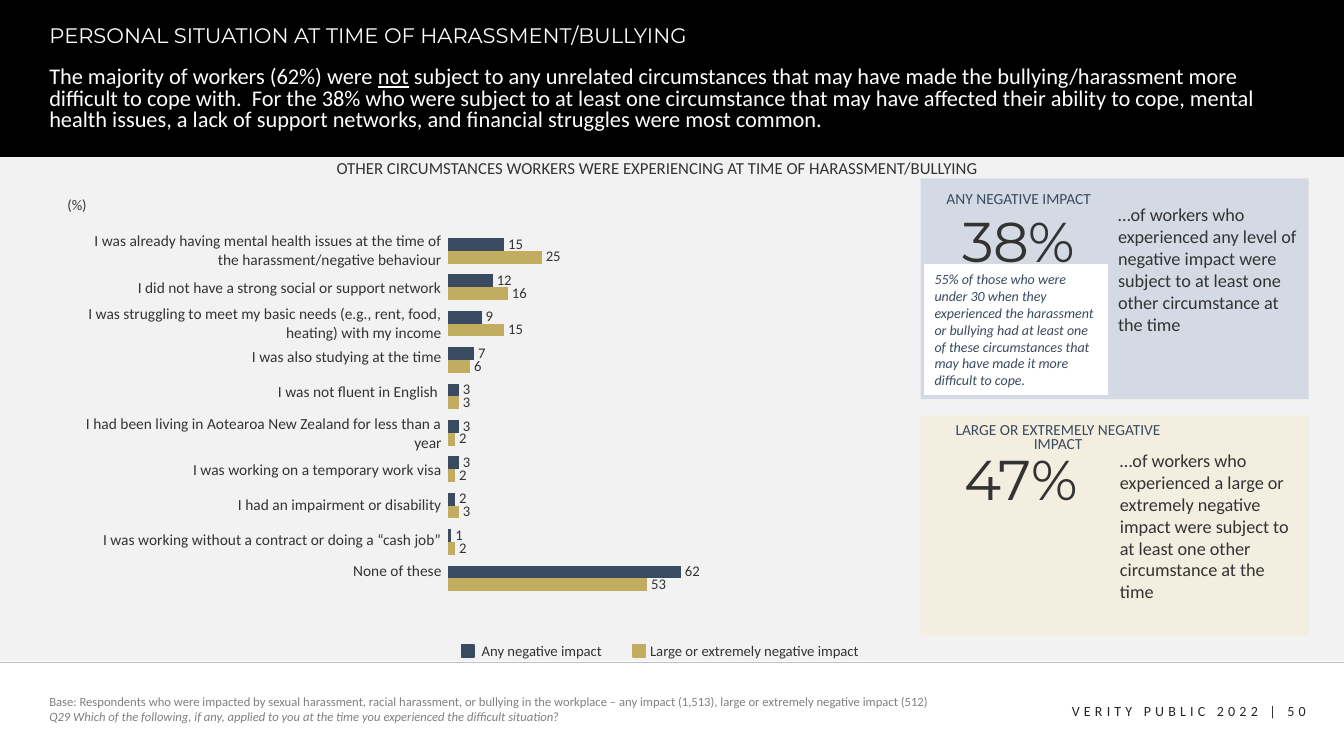
from dataclasses import dataclass

from lxml import etree
from pptx import Presentation
from pptx.chart.data import CategoryChartData
from pptx.dml.color import RGBColor
from pptx.enum.chart import XL_CHART_TYPE, XL_LABEL_POSITION
from pptx.enum.shapes import MSO_CONNECTOR, MSO_SHAPE
from pptx.enum.text import MSO_ANCHOR, PP_ALIGN
from pptx.oxml import parse_xml
from pptx.oxml.ns import nsdecls, qn
from pptx.util import Inches, Pt

RECT = MSO_SHAPE.RECTANGLE
STRAIGHT = MSO_CONNECTOR.STRAIGHT
BAR = XL_CHART_TYPE.BAR_CLUSTERED
OUTSIDE = XL_LABEL_POSITION.OUTSIDE_END
TOP, MIDDLE = MSO_ANCHOR.TOP, MSO_ANCHOR.MIDDLE
LEFT, CENTER, RIGHT = PP_ALIGN.LEFT, PP_ALIGN.CENTER, PP_ALIGN.RIGHT
NO_TABLE_STYLE = "{2D5ABB26-0587-4C30-8999-92F81FD0307C}"


@dataclass(frozen=True)
class Theme:
    body: str = "Calibri"
    display: str = "Montserrat"
    black: str = "000000"
    white: str = "FFFFFF"
    panel: str = "F2F2F2"
    rule: str = "BFBFBF"
    text: str = "333333"
    footer: str = "262626"
    muted: str = "808080"
    navy: str = "3A4A60"
    gold: str = "C1AC5F"
    pale_navy: str = "D3DAE4"
    pale_gold: str = "F3EEDF"
    figure: float = 40
    lead: float = 16
    title: float = 15
    story: float = 13
    heading: float = 12
    label: float = 11
    value: float = 10.5
    small: float = 10
    note: float = 9


class SlideBuilder:
    def __init__(self, slide, theme):
        self.slide = slide
        self.theme = theme

    def color(self, name):
        return RGBColor.from_string(getattr(self.theme, name))

    def style(self, font, size, color="text", face="body"):
        font.name = getattr(self.theme, face)
        font.size = Pt(getattr(self.theme, size))
        font.color.rgb = self.color(color)

    def fill_text(self, frame, paragraphs, size, color="text", face="body", align=LEFT,
                  anchor=TOP, wrap=True, line=None, before=None, spacing=None):
        frame.word_wrap = wrap
        frame.vertical_anchor = anchor
        if isinstance(paragraphs, str):
            paragraphs = [[(paragraphs, "")]]
        for index, pieces in enumerate(paragraphs):
            paragraph = frame.add_paragraph() if index else frame.paragraphs[0]
            paragraph.alignment = align
            if line:
                paragraph.line_spacing = line
            if before:
                paragraph.space_before = Pt(before)
            for words, emphasis in pieces:
                run = paragraph.add_run()
                run.text = words
                self.style(run.font, size, color, face)
                if emphasis == "italic":
                    run.font.italic = True
                if emphasis == "underline":
                    run.font.underline = True
                if spacing:
                    run.font._element.set("spc", str(spacing * 100))

    def box(self, area):
        return tuple(Inches(length) for length in area)

    def title(self, words, area):
        title = self.slide.shapes.title
        title.left, title.top, title.width, title.height = self.box(area)
        self.fill_text(title.text_frame, words, "title", "white", "display", line=0.9)

    def text(self, words, area, size, **style):
        holder = self.slide.shapes.add_textbox(*self.box(area))
        self.fill_text(holder.text_frame, words, size, **style)

    def rect(self, area, fill, outlined=False):
        shape = self.slide.shapes.add_shape(RECT, *self.box(area))
        shape.shadow.inherit = False
        shape.fill.solid()
        shape.fill.fore_color.rgb = self.color(fill)
        if outlined:
            shape.line.color.rgb = self.color(fill)
            shape.line.width = Pt(1)
        else:
            shape.line.fill.background()
        return shape

    def rule(self, start, end, color, width):
        line = self.slide.shapes.add_connector(STRAIGHT, *self.box(start + end))
        line.line.color.rgb = self.color(color)
        line.line.width = Pt(width)
        etree.SubElement(line._element.spPr, qn("a:effectLst"))

    def bars(self, area, categories, series, plot):
        data = CategoryChartData()
        data.categories = categories
        for name, values, _ in series:
            data.add_series(name, values)
        chart = self.slide.shapes.add_chart(BAR, *self.box(area), data).chart
        self.style(chart.font, "heading")
        chart.has_legend = False
        chart.has_title = False
        chart.category_axis.reverse_order = True
        chart.category_axis.visible = False
        values_axis = chart.value_axis
        values_axis.minimum_scale, values_axis.maximum_scale = 0, 100
        values_axis.has_major_gridlines = False
        values_axis.visible = False
        bars = chart.plots[0]
        bars.gap_width, bars.overlap = 84, 0
        bars.vary_by_categories = False
        for drawn, (_, _, color) in zip(bars.series, series):
            drawn.format.fill.solid()
            drawn.format.fill.fore_color.rgb = self.color(color)
            labels = drawn.data_labels
            labels.show_value = True
            labels.position = OUTSIDE
            self.style(labels.font, "value")
        sizes = "".join(f'<c:{tag} val="{size}"/>' for tag, size in zip("xywh", plot))
        layout = parse_xml(
            f'<c:layout {nsdecls("c")}><c:manualLayout><c:layoutTarget val="inner"/>'
            f'<c:xMode val="edge"/><c:yMode val="edge"/>{sizes}</c:manualLayout></c:layout>')
        plot_area = chart._chartSpace.find(".//" + qn("c:plotArea"))
        for automatic in plot_area.findall(qn("c:layout")):
            plot_area.remove(automatic)
        plot_area.insert(0, layout)

    def labels_table(self, area, rows):
        graphic = self.slide.shapes.add_table(len(rows), 1, *self.box(area))
        graphic._element.find(".//" + qn("a:tableStyleId")).text = NO_TABLE_STYLE
        table = graphic.table
        table.first_row = table.horz_banding = False
        for index, (words, height) in enumerate(rows):
            table.rows[index].height = Inches(height)
            cell = table.cell(index, 0)
            cell.fill.background()
            cell.margin_left = cell.margin_right = cell.margin_top = Inches(0.01)
            cell.margin_bottom = 0
            self.fill_text(cell.text_frame, words, "label", align=RIGHT)
            cell.vertical_anchor = MIDDLE


def main():
    deck = Presentation()
    deck.slide_width, deck.slide_height = Inches(13.33), Inches(7.5)
    page = SlideBuilder(deck.slides.add_slide(deck.slide_layouts[5]), Theme())

    circumstances = [
        ("I was already having mental health issues at the time of the harassment/negative behaviour", 0.43, 15, 25),
        ("I did not have a strong social or support network", 0.31, 12, 16),
        ("I was struggling to meet my basic needs (e.g., rent, food, heating) with my income", 0.38, 9, 15),
        ("I was also studying at the time", 0.3, 7, 6),
        ("I was not fluent in English ", 0.39, 3, 3),
        ("I had been living in Aotearoa New Zealand for less than a year", 0.44, 3, 2),
        ("I was working on a temporary work visa", 0.28, 3, 2),
        ("I had an impairment or disability", 0.41, 2, 3),
        ("I was working without a contract or doing a “cash job”", 0.3, 1, 2),
        ("None of these", 0.31, 62, 53),
    ]
    labels, heights, any_impact, large_impact = zip(*circumstances)

    for band, fill in (((0, 0, 13.33, 1.57), "black"), ((0, 1.56, 13.33, 5), "panel")):
        page.rect(band, fill)
    page.rule((0, 6.57), (13.33, 6.57), "rule", 0.5)
    title_element = page.slide.shapes.title._element
    title_element.getparent().append(title_element)
    page.title("PERSONAL SITUATION AT TIME OF HARASSMENT/BULLYING", (0.39, 0.2, 12.55, 0.4))
    page.text([[("The majority of workers (62%) were ", ""), ("not", "underline"), (" subject to any unrelated circumstances that may have made the bullying/harassment more difficult to cope with.  For the 38% who were subject to at least one circumstance that may have affected their ability to cope, mental health issues, a lack of support networks, and financial struggles were most common.", "")]],
              (0.39, 0.6, 12.55, 0.78), "lead", color="white", anchor=MIDDLE, line=0.8, before=10)
    page.text("OTHER CIRCUMSTANCES WORKERS WERE EXPERIENCING AT TIME OF HARASSMENT/BULLYING",
              (3.24, 1.43, 7.4, 0.5), "heading", anchor=MIDDLE, line=0.9, before=10)
    page.text("(%)", (0.57, 1.79, 0.52, 0.5), "value", anchor=MIDDLE, line=0.9, before=10)

    legend = [("Any negative impact", any_impact, "navy"),
              ("Large or extremely negative impact", large_impact, "gold")]
    page.bars((4.07, 2.14, 4.69, 4.31), labels, legend, (0.079, 0.039, 0.796, 0.838))
    page.labels_table((0.83, 2.27, 3.56, 3.55), list(zip(labels, heights)))
    for (name, _, color), key_left, name_left, width in zip(legend, (4.58, 6.28), (4.68, 6.35), (1.54, 2.53)):
        page.rect((key_left, 6.4, 0.12, 0.12), color, outlined=True)
        page.text(name, (name_left, 6.32, width, 0.28), "value")

    cards = [
        (1.77, "pale_navy", "ANY NEGATIVE IMPACT", (9.22, 1.86, 1.77, 0.34), "38%", (8.98, 2),
         "…of workers who experienced any level of negative impact were subject to at least one other circumstance at the time",
         (10.99, 1.97, 1.99, 1.41)),
        (4.12, "pale_gold", "LARGE OR EXTREMELY NEGATIVE IMPACT", (9.22, 4.15, 2.55, 0.34), "47%", (9, 4.36),
         "…of workers who experienced a large or extremely negative impact were subject to at least one other circumstance at the time",
         (11.01, 4.41, 1.97, 1.63)),
    ]
    for top, fill, heading, heading_area, share, corner, story, story_area in cards:
        page.rect((9.13, top, 3.85, 2.19), fill)
        page.text(share, corner + (2.25, 0.77), "figure", face="display", align=CENTER)
        page.text(heading, heading_area, "label", color="navy", align=CENTER, wrap=False, line=0.8)
        page.text(story, story_area, "story")
    under_30 = page.rect((9.17, 2.63, 1.81, 1.28), "white", outlined=True)
    page.fill_text(under_30.text_frame, [[("55% of those who were under 30 when they experienced the harassment or bullying had at least one of these circumstances that may have made it more difficult to cope.", "italic")]],
                   "small", "navy", anchor=MIDDLE)

    page.text([[("Base: Respondents who were impacted by sexual harassment, racial harassment, or bullying in the workplace – any impact (1,513), large or extremely negative impact (512)", "")],
               [("Q29 Which of the following, if any, applied to you at the time you experienced the difficult situation", "italic"), ("?", "")]],
              (0.39, 6.83, 9.95, 0.4), "note", color="muted", anchor=MIDDLE)
    page.text("VERITY PUBLIC 2022 | 50", (10.08, 6.92, 2.97, 0.27), "small",
              color="footer", align=RIGHT, spacing=3)
    deck.save("out.pptx")


if __name__ == "__main__":
    main()
